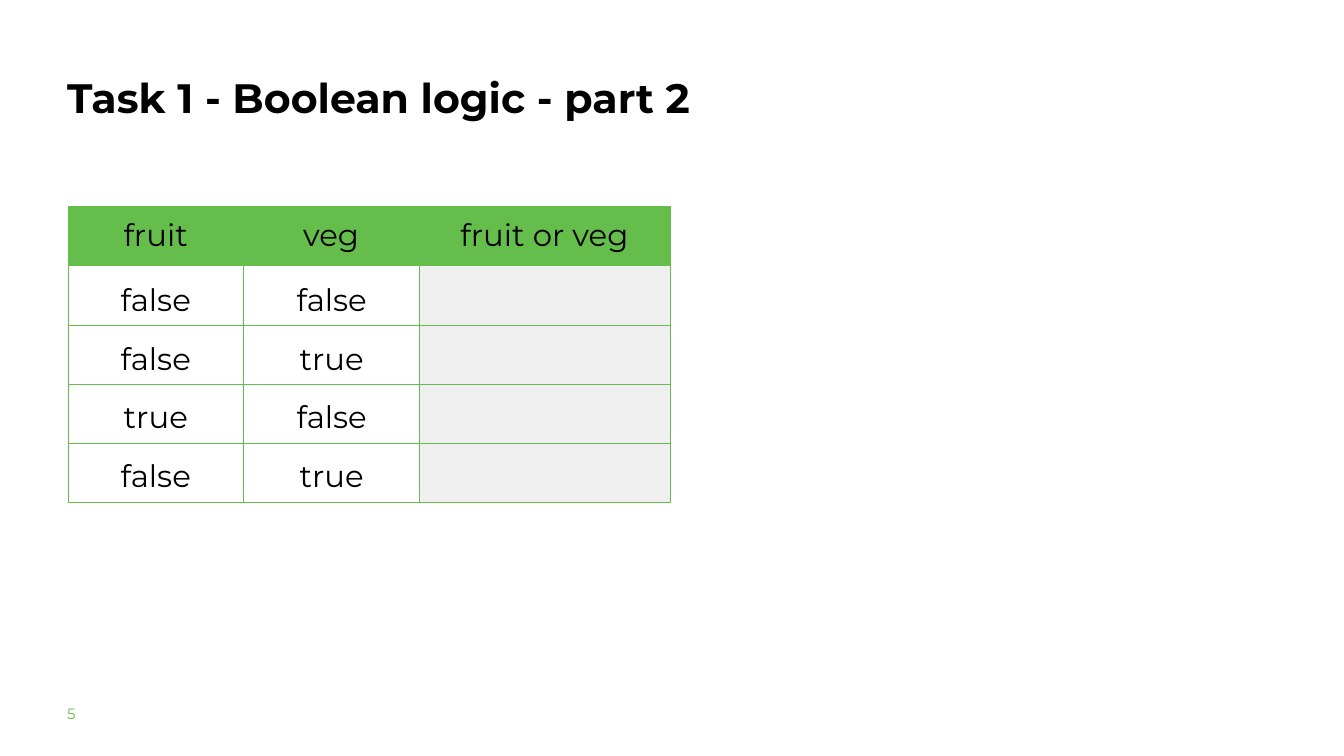
from lxml import etree
from pptx import Presentation
from pptx.dml.color import RGBColor
from pptx.enum.text import MSO_ANCHOR, PP_ALIGN
from pptx.oxml.ns import qn
from pptx.util import Cm, Pt

LEFT, CENTER = PP_ALIGN.LEFT, PP_ALIGN.CENTER
MIDDLE = MSO_ANCHOR.MIDDLE
GREEN, GREY, BLACK = "65BE4B", "EFEFEF", "000000"

HEADINGS = ["fruit", "veg", "fruit or veg"]
TRUTH_ROWS = [
    ["false", "false"],
    ["false", "true"],
    ["true", "false"],
    ["false", "true"],
]
COLUMN_WIDTHS = [6.63, 6.63, 9.5]
ROW_HEIGHT = 2.24


def rgb(code):
    """Turn a hex string into a colour."""
    return RGBColor.from_string(code)


class SlideBuilder:
    """Hold the style and the current slide."""

    font = "Montserrat"
    body_size = 33

    def __init__(self, slide):
        """Keep the slide to draw on."""
        self.slide = slide

    def add_run(self, paragraph, words, size, color=BLACK, bold=False, align=LEFT):
        """Add one styled run to a paragraph."""
        paragraph.alignment = align
        run = paragraph.add_run()
        run.text = words
        run.font.name = self.font
        run.font.size = Pt(size)
        run.font.bold = bold
        run.font.color.rgb = rgb(color)

    def text(self, left, top, width, height, words, size, inset=0, spacing=None, **style):
        """Add a wrapped text box with one paragraph."""
        box = self.slide.shapes.add_textbox(Cm(left), Cm(top), Cm(width), Cm(height))
        frame = box.text_frame
        frame.word_wrap = True
        frame.margin_left = frame.margin_right = 0
        frame.margin_top = frame.margin_bottom = Cm(inset)
        paragraph = frame.paragraphs[0]
        paragraph.line_spacing = spacing
        self.add_run(paragraph, words, size, **style)

    def border(self, cell, color, width):
        """Draw the four sides of a cell."""
        properties = cell._tc.get_or_add_tcPr()
        for side in ("a:lnL", "a:lnR", "a:lnT", "a:lnB"):
            line = etree.SubElement(properties, qn(side), w=str(Pt(width)))
            fill = etree.SubElement(line, qn("a:solidFill"))
            etree.SubElement(fill, qn("a:srgbClr"), val=color)

    def table(self, left, top, widths, row_height, row_count, headings):
        """Add a table with green headings and a grey answer column."""
        frame = self.slide.shapes.add_table(
            row_count, len(widths), Cm(left), Cm(top), Cm(sum(widths)), Cm(row_height * row_count)
        )
        table = frame.table
        table.first_row = table.horz_banding = False
        for column, width in zip(table.columns, widths):
            column.width = Cm(width)
        for row_index, row in enumerate(table.rows):
            row.height = Cm(row_height)
            for column_index, cell in enumerate(row.cells):
                self.border(cell, GREEN, 0.75)
                cell.vertical_anchor = MIDDLE
                cell.margin_left = cell.margin_right = Cm(0.5)
                cell.margin_top = cell.margin_bottom = 0
                if row_index == 0:
                    self.fill(cell, GREEN)
                    heading = cell.text_frame.paragraphs[0]
                    self.add_run(heading, headings[column_index], self.body_size, align=CENTER)
                elif column_index == len(widths) - 1:
                    self.fill(cell, GREY)
                else:
                    cell.fill.background()

    def fill(self, cell, color):
        """Give a cell a solid colour."""
        cell.fill.solid()
        cell.fill.fore_color.rgb = rgb(color)


def main():
    """Build and save the slide."""
    deck = Presentation()
    deck.slide_width, deck.slide_height = Cm(50.8), Cm(28.58)
    builder = SlideBuilder(deck.slides.add_slide(deck.slide_layouts[6]))

    builder.text(
        2.54, 2.46, 45.11, 4.52, "Task 1 - Boolean logic - part 2", 44, spacing=1.15, bold=True
    )
    builder.text(2.54, 26.62, 3.99, 0.99, "5", 16, color=GREEN)
    builder.table(2.57, 7.8, COLUMN_WIDTHS, ROW_HEIGHT, len(TRUTH_ROWS) + 1, HEADINGS)
    for row, values in enumerate(TRUTH_ROWS):
        for column, value in enumerate(values):
            builder.text(
                4.14 + 6.65 * column, 10.41 + 2.22 * row, 3.5, 1.5,
                value, builder.body_size, inset=0.2, align=CENTER,
            )
    deck.save("out.pptx")


if __name__ == "__main__":
    main()
